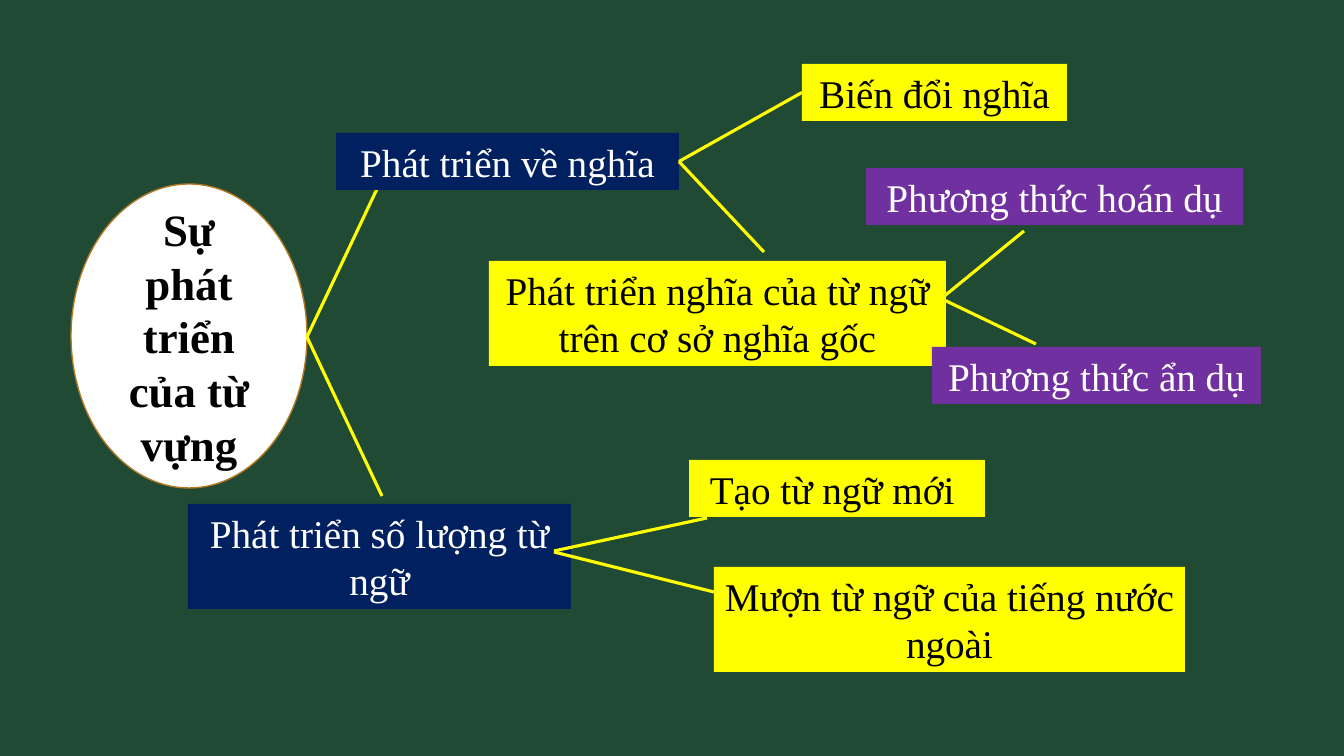
from pptx import Presentation
from pptx.dml.color import RGBColor
from pptx.enum.shapes import MSO_CONNECTOR, MSO_SHAPE
from pptx.enum.text import MSO_ANCHOR, MSO_AUTO_SIZE, PP_ALIGN
from pptx.oxml.ns import qn
from pptx.util import Pt

RECT, OVAL = MSO_SHAPE.RECTANGLE, MSO_SHAPE.OVAL
STRAIGHT = MSO_CONNECTOR.STRAIGHT
CENTER = PP_ALIGN.CENTER
TOP, MIDDLE = MSO_ANCHOR.TOP, MSO_ANCHOR.MIDDLE
GROW = MSO_AUTO_SIZE.SHAPE_TO_FIT_TEXT
LEFT_SIDE, RIGHT_SIDE = 1, 3

GREEN = RGBColor(0x21, 0x4A, 0x34)
NAVY = RGBColor(0x00, 0x20, 0x60)
YELLOW = RGBColor(0xFF, 0xFF, 0x00)
PURPLE = RGBColor(0x70, 0x30, 0xA0)
BROWN = RGBColor(0xB2, 0x78, 0x22)
WHITE = RGBColor(0xFF, 0xFF, 0xFF)
BLACK = RGBColor(0x00, 0x00, 0x00)

FONT = "Times New Roman"
PX = 914400 / 100.8
SLIDE_SIZE = (1344, 756)
ONE_LINE, TWO_LINES = 57, 105

ROOT = ("Sự phát triển của từ vựng", 71, 184, 236, 304)

# key: (text, left, top, width, height, fill, font colour)
TOPICS = {
    "meaning": ("Phát triển về nghĩa", 336, 133, 343, ONE_LINE, NAVY, WHITE),
    "quantity": ("Phát triển số lượng từ ngữ", 188, 504, 383, TWO_LINES, NAVY, WHITE),
    "change": ("Biến đổi nghĩa", 802, 64, 265, ONE_LINE, YELLOW, BLACK),
    "extension": ("Phát triển nghĩa của từ ngữ trên cơ sở nghĩa gốc",
                  489, 261, 457, TWO_LINES, YELLOW, BLACK),
    "metaphor": ("Phương thức ẩn dụ", 932, 347, 329, ONE_LINE, PURPLE, WHITE),
    "metonymy": ("Phương thức hoán dụ", 866, 168, 377, ONE_LINE, PURPLE, WHITE),
    "coining": ("Tạo từ ngữ mới ", 689, 460, 296, ONE_LINE, YELLOW, BLACK),
    "borrowing": ("Mượn từ ngữ của tiếng nước ngoài",
                  714, 567, 471, TWO_LINES, YELLOW, BLACK),
}

# Each end is a point (x, y) or a joined side (topic key, side)
ROOT_BRANCHES = [
    ((307, 337), (386, 170)),
    ((307, 337), (382, 496)),
]
TOPIC_BRANCHES = [
    (("meaning", RIGHT_SIDE), ("change", LEFT_SIDE)),
    (("meaning", RIGHT_SIDE), (764, 252)),
    ((942, 298), (1024, 231)),
    ((940, 298), (1036, 344)),
    ((554, 551), (707, 518)),
    ((554, 552), (714, 592)),
]


def emu(*lengths):
    return [round(n * PX) for n in lengths]


def add_node(s, kind, text, box, fill, color, size, bold=False):
    sp = s.shapes.add_shape(kind, *emu(*box))
    sp.shadow.inherit = False
    sp.fill.solid()
    sp.fill.fore_color.rgb = fill
    sp.line.fill.background()
    tf = sp.text_frame
    tf.word_wrap = True
    p = tf.paragraphs[0]
    p.alignment = CENTER
    r = p.add_run()
    r.text = text
    r.font.name = FONT
    r.font.size = Pt(size)
    r.font.bold = bold
    r.font.color.rgb = color
    return sp


def add_branch(s, begin, end, nodes):
    points = [(0, 0) if e[0] in nodes else e for e in (begin, end)]
    line = s.shapes.add_connector(STRAIGHT, *emu(*points[0], *points[1]))
    for e, connect in ((begin, line.begin_connect), (end, line.end_connect)):
        if e[0] in nodes:
            connect(nodes[e[0]], e[1])
    line.line.color.rgb = YELLOW
    line.line.width = Pt(2.25)
    sp_pr = line._element.spPr
    sp_pr.append(sp_pr.makeelement(qn("a:effectLst"), {}))


def main():
    prs = Presentation()
    prs.slide_width, prs.slide_height = emu(*SLIDE_SIZE)
    s = prs.slides.add_slide(prs.slide_layouts[6])
    s.background.fill.solid()
    s.background.fill.fore_color.rgb = GREEN

    text, *box = ROOT
    root = add_node(s, OVAL, text, box, WHITE, BLACK, 32, bold=True)
    root.text_frame.vertical_anchor = MIDDLE
    root.line.color.rgb = BROWN
    root.line.width = Pt(1)

    nodes = {}
    for begin, end in ROOT_BRANCHES:
        add_branch(s, begin, end, nodes)
    for key, (text, *box, fill, color) in TOPICS.items():
        nodes[key] = add_node(s, RECT, text, box, fill, color, 28)
        nodes[key].text_frame.vertical_anchor = TOP
        nodes[key].text_frame.auto_size = GROW
    for begin, end in TOPIC_BRANCHES:
        add_branch(s, begin, end, nodes)

    prs.save("out.pptx")


if __name__ == "__main__":
    main()
